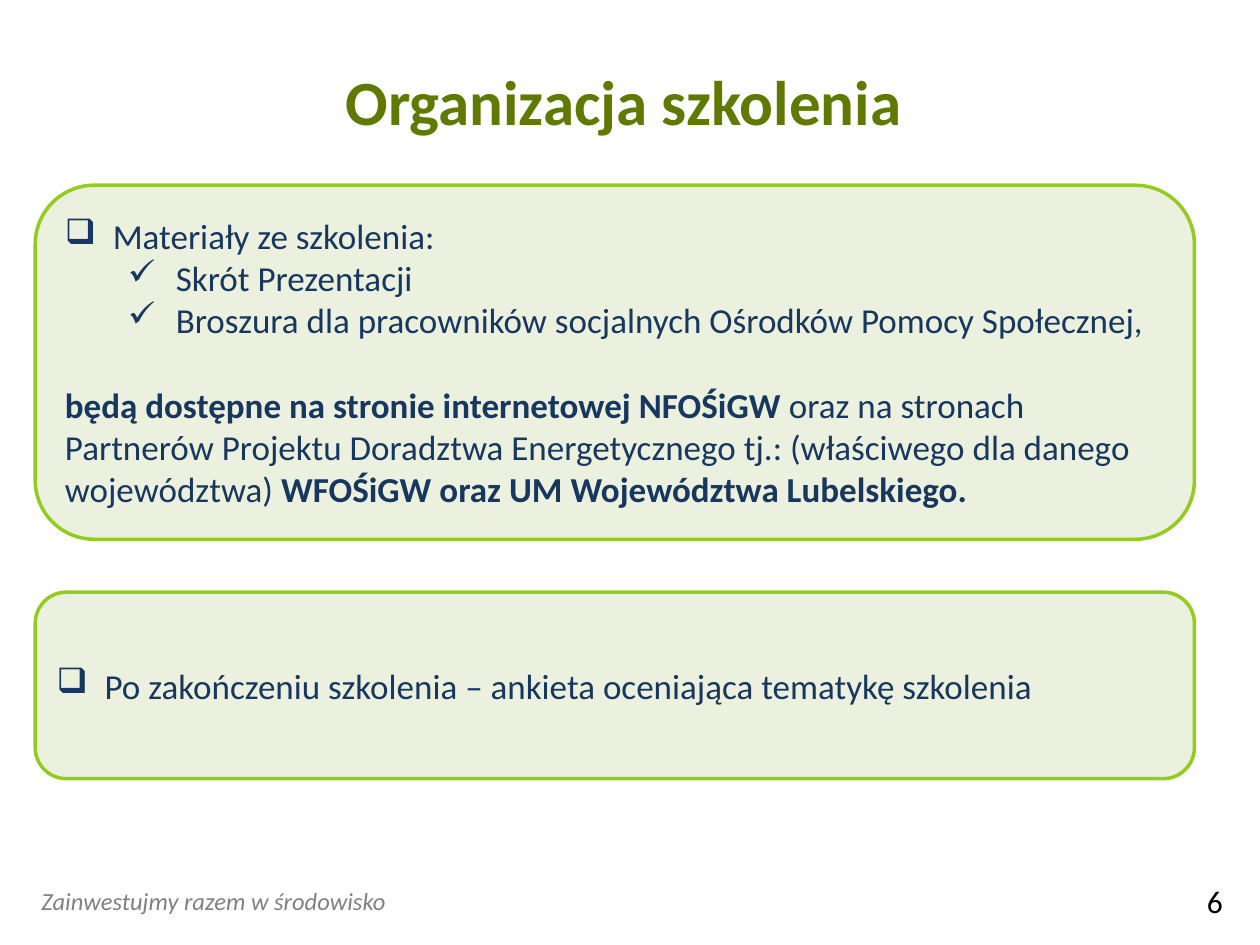
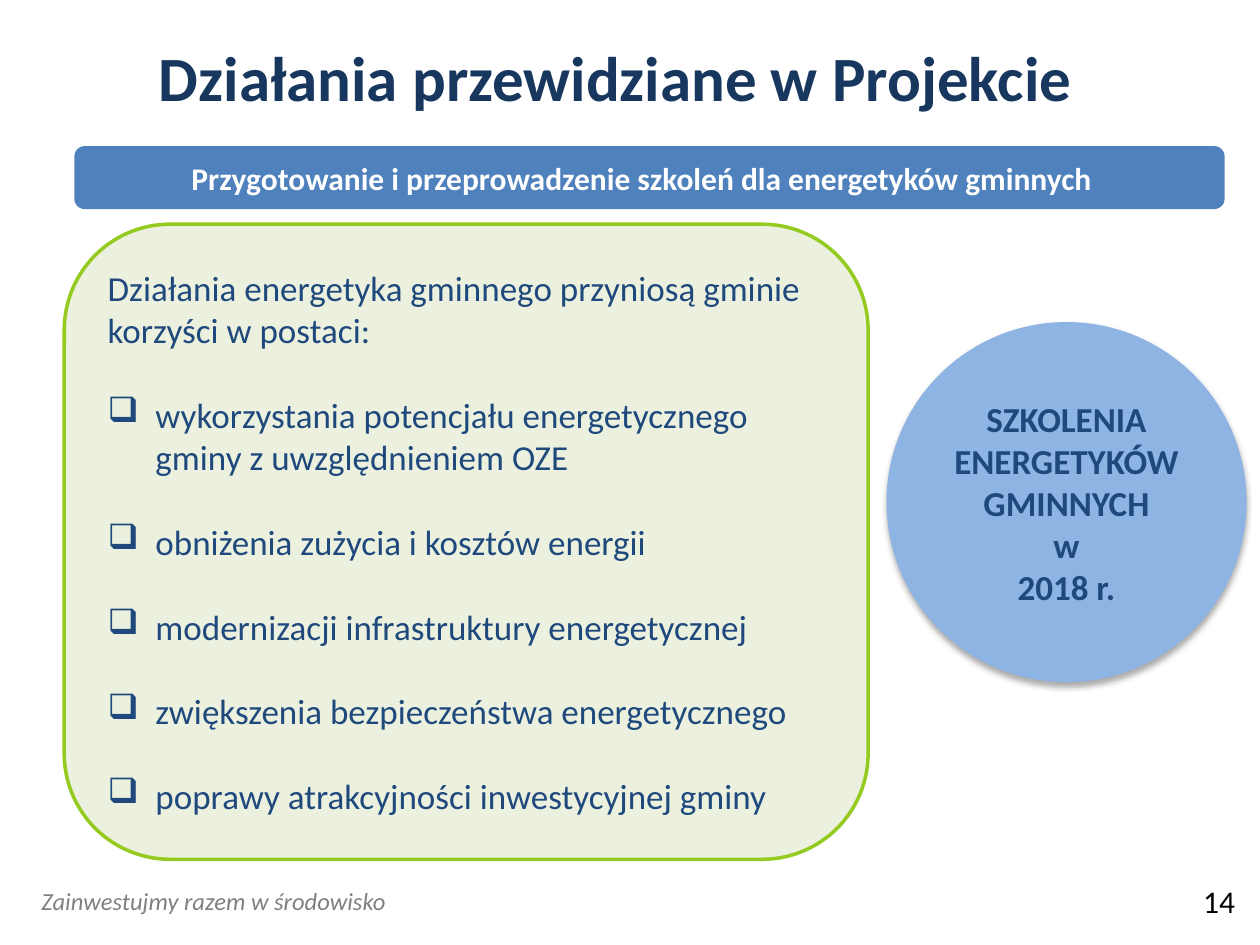
import dataclasses

import lxml.etree
import pptx
import pptx.dml.color
import pptx.enum.shapes
import pptx.enum.text
import pptx.oxml.ns
import pptx.util

Inches = pptx.util.Inches
Pt = pptx.util.Pt
RGBColor = pptx.dml.color.RGBColor
Align = pptx.enum.text.PP_ALIGN
Anchor = pptx.enum.text.MSO_ANCHOR
Shape = pptx.enum.shapes.MSO_SHAPE

OLIVE = RGBColor(0x5F, 0x79, 0x01)
LIME = RGBColor(0x95, 0xCA, 0x20)
PALE_GREEN = RGBColor(0xEB, 0xF1, 0xDE)
NAVY = RGBColor(0x17, 0x37, 0x5E)
DARK_BLUE = RGBColor(0x1F, 0x49, 0x7D)
BLUE = RGBColor(0x4F, 0x81, 0xBD)
LIGHT_BLUE = RGBColor(0x8E, 0xB4, 0xE3)
GREY = RGBColor(0x80, 0x80, 0x80)
BLACK = RGBColor(0, 0, 0)
WHITE = RGBColor(0xFF, 0xFF, 0xFF)

FONT = "Calibri"
BODY_SIZE = 20
LINE_GAP = Pt(24.4)
SQUARE = "❑"
TICK = "✓"
HANG = 0.38
LEVEL_STEP = 0.5


@dataclasses.dataclass
class Line:
    """One paragraph: a string or (text, bold) spans, with its bullet and gap."""
    content: object
    bullet: str = ""
    level: int = 0
    gap: bool = False


def add_bullet(para, bullet, level):
    """Give a paragraph a hanging bullet character."""
    properties = para._p.get_or_add_pPr()
    properties.set("marL", str(Inches(HANG + LEVEL_STEP * level)))
    properties.set("indent", str(-Inches(HANG)))
    mark = lxml.etree.SubElement(properties, pptx.oxml.ns.qn("a:buChar"))
    mark.set("char", bullet)


def write_text(shape, lines, *, size=BODY_SIZE, color=NAVY, bold=False,
               italic=False, align=Align.LEFT, anchor=Anchor.MIDDLE):
    """Fill a shape with formatted paragraphs."""
    frame = shape.text_frame
    frame.word_wrap = True
    frame.vertical_anchor = anchor
    for index, line in enumerate(lines):
        para = frame.paragraphs[0] if index == 0 else frame.add_paragraph()
        para.alignment = align
        para.level = line.level
        if line.gap:
            para.space_before = LINE_GAP
        if line.bullet:
            add_bullet(para, line.bullet, line.level)
        spans = line.content
        if isinstance(spans, str):
            spans = [(spans, bold)]
        for text, is_bold in spans:
            span = para.add_run()
            span.text = text
            span.font.name = FONT
            span.font.size = Pt(size)
            span.font.bold = is_bold
            span.font.italic = italic
            span.font.color.rgb = color


def add_label(page, box, text, **text_format):
    """Place a one-paragraph text box."""
    label = page.shapes.add_textbox(*map(Inches, box))
    write_text(label, [Line(text)], **text_format)


def add_filled(page, kind, box, fill, outline=None):
    """Place a flat preset shape, outlined if a colour is given."""
    shape = page.shapes.add_shape(kind, *map(Inches, box))
    shape.shadow.inherit = False
    shape.fill.solid()
    shape.fill.fore_color.rgb = fill
    if outline is None:
        shape.line.fill.background()
    else:
        shape.line.color.rgb = outline
        shape.line.width = Pt(2)
    return shape


def add_panel(page, box, lines, color):
    """Place a pale green rounded panel of text."""
    panel = add_filled(page, Shape.ROUNDED_RECTANGLE, box, PALE_GREEN, LIME)
    write_text(panel, lines, color=color)


def add_banner(page, box, text):
    """Place a blue banner whose text sits slightly left of centre."""
    banner = add_filled(page, Shape.ROUNDED_RECTANGLE, box, BLUE)
    banner.text_frame.margin_right = Inches(0.22)
    write_text(banner, [Line(text)], size=18, color=WHITE, bold=True,
               align=Align.CENTER)


def add_badge(page, box, lines):
    """Place a light blue circle with a soft shadow below it."""
    badge = add_filled(page, Shape.OVAL, box, LIGHT_BLUE, LIGHT_BLUE)
    qn = pptx.oxml.ns.qn
    effects = badge._element.spPr.find(qn("a:effectLst"))
    shadow = lxml.etree.SubElement(
        effects, qn("a:outerShdw"), blurRad=str(Pt(3.5)), dist=str(Pt(2.2)),
        dir="5400000", rotWithShape="0")
    shade = lxml.etree.SubElement(shadow, qn("a:srgbClr"), val="000000")
    lxml.etree.SubElement(shade, qn("a:alpha"), val="32000")
    write_text(badge, lines, color=DARK_BLUE, bold=True, align=Align.CENTER)


def add_page(deck, title, title_box, title_color, number, number_box):
    """Add a blank slide with the shared title, footer and number."""
    page = deck.slides.add_slide(deck.slide_layouts[6])
    add_label(page, (0.23, 6.98, 4.22, 0.34), "Zainwestujmy razem w środowisko",
              size=14, color=GREY, italic=True, anchor=Anchor.TOP)
    add_label(page, title_box, title, size=36, color=title_color, bold=True,
              align=Align.CENTER)
    add_label(page, number_box, number, size=18, color=BLACK,
              anchor=Anchor.TOP)
    return page


def build_organisation(deck):
    """Build the slide on training materials and the survey."""
    page = add_page(deck, "Organizacja szkolenia", (0.42, 0.44, 9.06, 0.71),
                    OLIVE, "6", (9.48, 6.95, 0.48, 0.4))
    materials = [
        Line("Materiały ze szkolenia:", SQUARE),
        Line("Skrót Prezentacji", TICK, 1),
        Line("Broszura dla pracowników socjalnych Ośrodków Pomocy Społecznej,",
             TICK, 1),
        Line([("będą dostępne na stronie internetowej NFOŚiGW ", True),
              ("oraz na stronach Partnerów Projektu Doradztwa Energetycznego "
               "tj.: (właściwego dla danego województwa) ", False),
              ("WFOŚiGW oraz UM Województwa Lubelskiego.", True)], gap=True),
    ]
    survey = [Line("Po zakończeniu szkolenia – ankieta oceniająca tematykę "
                   "szkolenia", SQUARE)]
    add_panel(page, (0.28, 1.47, 9.2, 2.81), materials, NAVY)
    add_panel(page, (0.28, 4.7, 9.2, 1.48), survey, NAVY)


def build_activities(deck):
    """Build the slide on the benefits of municipal energy officers."""
    page = add_page(deck, "Działania przewidziane w Projekcie",
                    (0.83, 0.21, 8.11, 0.79), NAVY, "14",
                    (9.45, 6.95, 0.55, 0.4))
    benefits = [
        "wykorzystania potencjału energetycznego gminy z uwzględnieniem OZE",
        "obniżenia zużycia i kosztów energii",
        "modernizacji infrastruktury energetycznej",
        "zwiększenia bezpieczeństwa energetycznego",
        "poprawy atrakcyjności inwestycyjnej gminy",
    ]
    intro = Line("Działania energetyka gminnego przyniosą gminie korzyści "
                 "w postaci:")
    lines = [intro] + [Line(text, SQUARE, gap=True) for text in benefits]
    add_panel(page, (0.51, 1.78, 6.38, 5.04), lines, DARK_BLUE)
    add_badge(page, (7.05, 2.57, 2.83, 2.83),
              [Line("SZKOLENIA ENERGETYKÓW GMINNYCH"), Line("w"),
               Line("2018 r.")])
    add_banner(page, (0.59, 1.16, 9.13, 0.5),
               "Przygotowanie i przeprowadzenie szkoleń dla energetyków "
               "gminnych")


def main():
    """Build and save the deck."""
    deck = pptx.Presentation()
    deck.slide_width = Inches(10)
    deck.slide_height = Inches(7.5)
    build_organisation(deck)
    build_activities(deck)
    deck.save("out.pptx")


if __name__ == "__main__":
    main()
